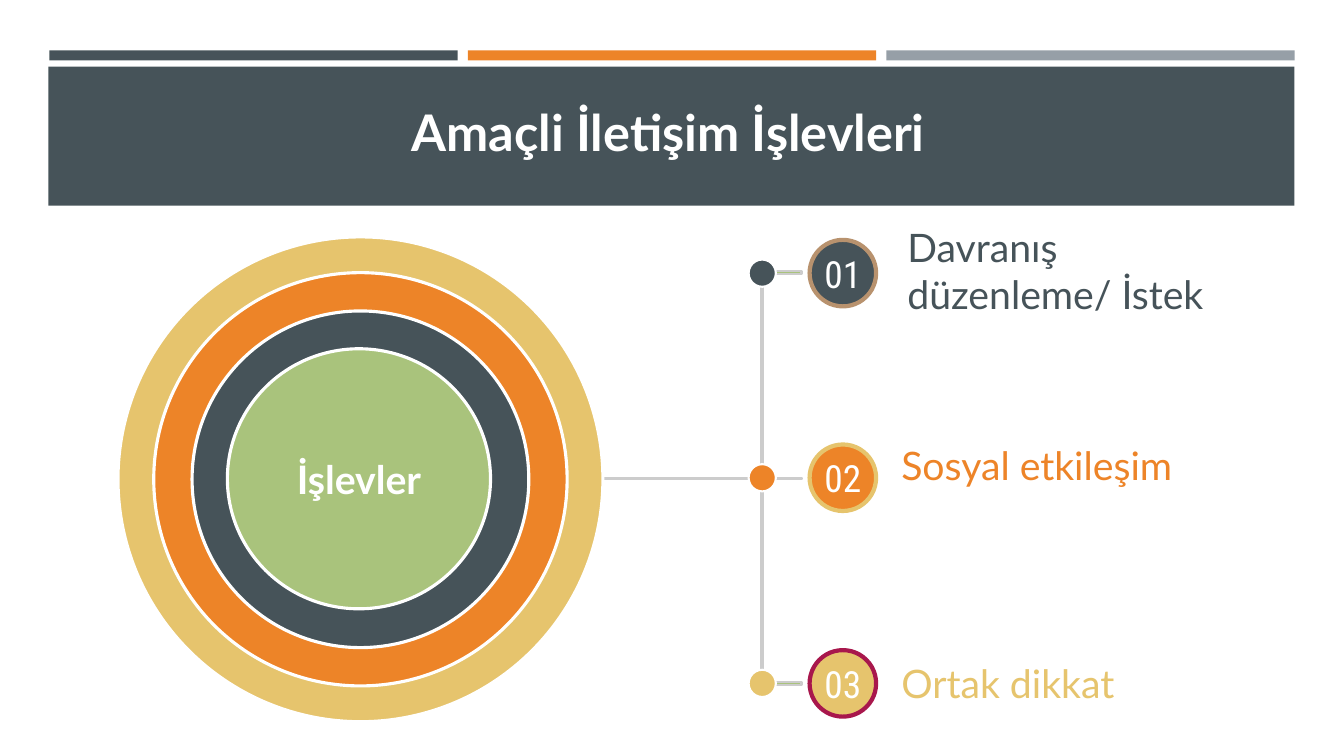
from pptx import Presentation
from pptx.dml.color import RGBColor
from pptx.enum.shapes import MSO_SHAPE as SHAPE
from pptx.enum.text import MSO_ANCHOR as ANCHOR, PP_ALIGN as ALIGN
from pptx.util import Inches, Pt

COLORS = {
    "slate": "465359", "orange": "ED8428", "gray": "969FA7", "sand": "E6C46D",
    "green": "A9C37C", "brown": "B8926E", "crimson": "A8174C",
    "rule": "CCCCCC", "white": "FFFFFF",
}
TEXT_FONT = "Lato"
NUMBER_FONT = "Roboto Condensed"
INSET = 0.13

# Number, label, label left, label top, centre height, colour, badge outline
FUNCTIONS = [
    ("01", "Davranış düzenleme/ İstek", 8.87, 2.34, 2.71, "slate", "brown"),
    ("02", "Sosyal etkileşim", 8.81, 4.27, 4.74, "orange", "sand"),
    ("03", "Ortak dikkat", 8.81, 6.43, 6.78, "sand", "crimson"),
]


def rgb(name):
    return RGBColor.from_string(COLORS[name])


def paint(shape, fill, line=None, width=0):
    shape.shadow.inherit = False
    shape.fill.solid()
    shape.fill.fore_color.rgb = rgb(fill)
    if line:
        shape.line.color.rgb = rgb(line)
        shape.line.width = Pt(width)
    else:
        shape.line.fill.background()


def write(shape, text, size, color, font=TEXT_FONT, bold=False,
          align=ALIGN.CENTER, side_inset=INSET):
    frame = shape.text_frame
    frame.word_wrap = True
    frame.vertical_anchor = ANCHOR.MIDDLE
    frame.margin_left = frame.margin_right = Inches(side_inset)
    frame.margin_top = frame.margin_bottom = Inches(INSET)
    frame.text = text
    paragraph = frame.paragraphs[0]
    paragraph.alignment = align
    style = paragraph.runs[0].font
    style.name, style.size, style.bold = font, Pt(size), bold
    style.color.rgb = rgb(color)


def add_bar(slide, left, top, width, height, color):
    bar = slide.shapes.add_shape(SHAPE.RECTANGLE, Inches(left), Inches(top),
                                 Inches(width), Inches(height))
    paint(bar, color)


def add_label(slide, left, top, width, height, text, size, color, **style):
    label = slide.shapes.add_textbox(Inches(left), Inches(top),
                                     Inches(width), Inches(height))
    write(label, text, size, color, **style)


def add_disc(slide, center_x, center_y, width, fill, line, line_width, height=None):
    height = height or width
    disc = slide.shapes.add_shape(
        SHAPE.OVAL, Inches(center_x - width / 2), Inches(center_y - height / 2),
        Inches(width), Inches(height))
    paint(disc, fill, line, line_width)
    return disc


def add_branch(slide, points):
    corners = [(Inches(x), Inches(y)) for x, y in points]
    builder = slide.shapes.build_freeform(*corners[0], scale=1.0)
    builder.add_line_segments(corners[1:], close=True)
    paint(builder.convert_to_shape(), "green", "rule", 1.5)


def main():
    prs = Presentation()
    prs.slide_width, prs.slide_height = Inches(13.33), Inches(7.5)
    slide = prs.slides.add_slide(prs.slide_layouts[6])

    # Header
    for i, color in enumerate(("slate", "orange", "gray")):
        add_bar(slide, 0.49 + 4.15 * i, 0.5, 4.05, 0.1, color)
    add_bar(slide, 0.48, 0.66, 12.36, 1.38, "slate")
    add_label(slide, 0.63, 1.09, 12, 0.43, "Amaçli İletişim İşlevleri",
              36, "white", bold=True)

    # Labels and numbered badges
    for number, text, left, top, center_y, color, outline in FUNCTIONS:
        add_label(slide, left, top, 3.28, 0.69, text, 28, color, align=ALIGN.LEFT)
        badge = add_disc(slide, 8.36, center_y, 0.66, color, outline, 3)
        write(badge, number, 26.7, "white", font=NUMBER_FONT, side_inset=0)

    # Bracket to the outer badges, and the line from the rings to the middle one
    add_branch(slide, [(7.55, 2.69), (7.55, 6.8), (7.95, 6.8), (7.95, 6.77),
                       (7.57, 6.77), (7.57, 2.72), (7.95, 2.72), (7.95, 2.69)])
    add_branch(slide, [(4.43, 4.74), (4.43, 4.75), (7.95, 4.75), (7.95, 4.74)])

    # Concentric rings around the core
    for diameter, color in ((4.81, "sand"), (4.1, "orange"), (3.34, "slate")):
        add_disc(slide, 3.575, 4.755, diameter, color, "white", 2.25)
    core = add_disc(slide, 3.56, 4.75, 2.61, "green", "white", 2.25, height=2.58)
    write(core, "İşlevler", 28, "white", bold=True)

    # Joints on the bracket
    for *_, center_y, color, _ in FUNCTIONS:
        add_disc(slide, 7.56, center_y, 0.27, color, "white", 1.5)

    prs.save("out.pptx")


if __name__ == "__main__":
    main()
